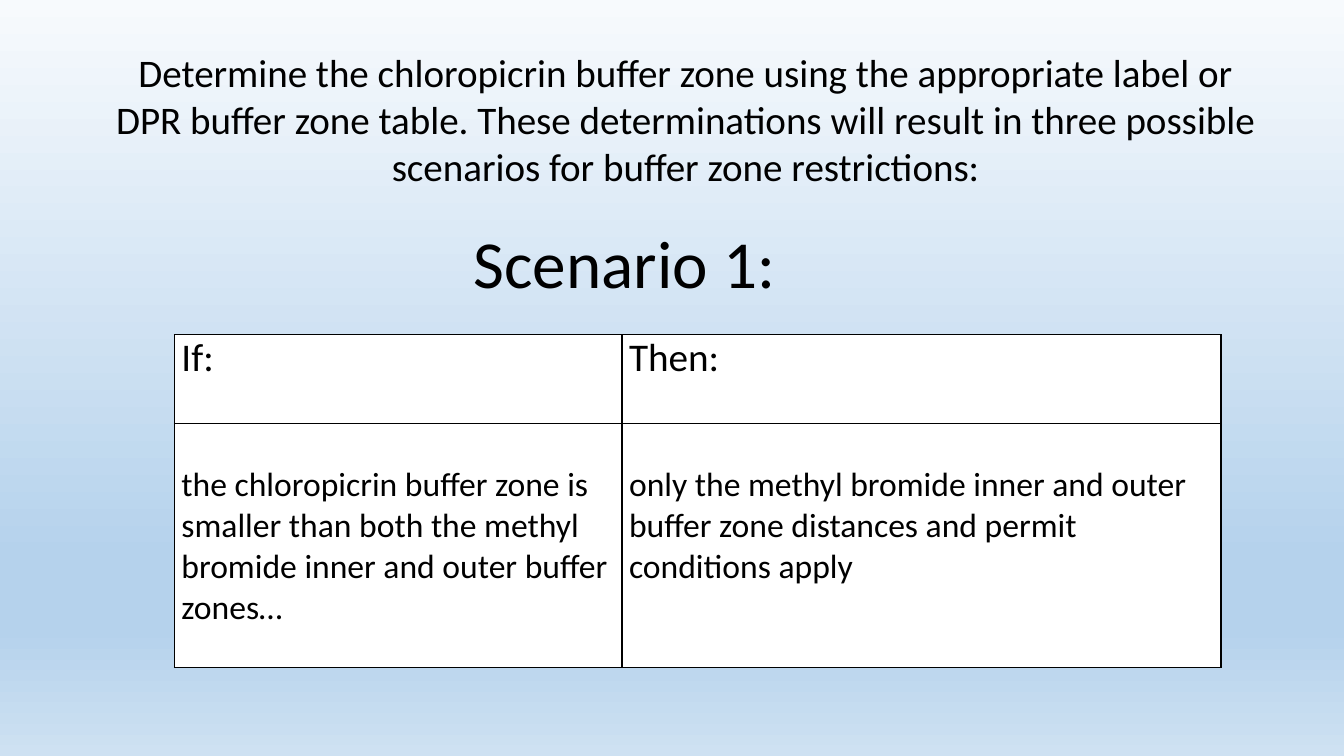
from pptx import Presentation
from pptx.dml.color import RGBColor
from pptx.enum.text import MSO_ANCHOR, PP_ALIGN
from pptx.oxml import parse_xml
from pptx.oxml.ns import nsdecls
from pptx.util import Inches, Pt

LEFT, CENTER = PP_ALIGN.LEFT, PP_ALIGN.CENTER
TOP, MIDDLE = MSO_ANCHOR.TOP, MSO_ANCHOR.MIDDLE

# Content
INTRO = ("Determine the chloropicrin buffer zone using the appropriate label or "
         "DPR buffer zone table. These determinations will result in three "
         "possible scenarios for buffer zone restrictions:")
HEADING = "Scenario 1:"
ROWS = [
    ("If:", "Then:"),
    ("the chloropicrin buffer zone is smaller than both the methyl bromide "
     "inner and outer buffer zones…",
     "only the methyl bromide inner and outer buffer zone distances and "
     "permit conditions apply"),
]

THEME = {
    "font": "Calibri", "ink": "000000", "cell": "FFFFFF",
    "intro": 27.9, "heading": 48, "rows": (28, 24), "rule": 1,
    "sky": [(0, "F7FAFD"), (74, "B5D2EC"), (83, "B5D2EC"), (100, "CEE1F2")],
}

# Layout in inches
COLS = (4.44, 5.94)
HEIGHTS = (0.88, 2.42)
PADS = (0, 0.41)


def style(frame, size, align=LEFT):
    for para in frame.paragraphs:
        para.alignment = align
        for run in para.runs:
            run.font.name = THEME["font"]
            run.font.size = Pt(size)
            run.font.color.rgb = RGBColor.from_string(THEME["ink"])


def add_text(slide, text, box, size, align, anchor):
    frame = slide.shapes.add_textbox(*map(Inches, box)).text_frame
    frame.word_wrap = True
    frame.vertical_anchor = anchor
    frame.text = text
    style(frame, size, align)


def set_sky(slide):
    fill = slide.background.fill
    fill.gradient()
    fill.gradient_angle = 270
    stops = "".join(
        f'<a:gs pos="{pos * 1000}"><a:srgbClr val="{tint}"/></a:gs>'
        for pos, tint in THEME["sky"])
    grad = slide.background.fill._fill._gradFill
    grad.replace(grad.gsLst, parse_xml(
        f'<a:gsLst {nsdecls("a")}>{stops}</a:gsLst>'))


def add_rules(cell):
    props = cell._tc.get_or_add_tcPr()
    for side in ("lnL", "lnR", "lnT", "lnB"):
        props.append(parse_xml(
            f'<a:{side} {nsdecls("a")} w="{Pt(THEME["rule"])}"><a:solidFill>'
            f'<a:srgbClr val="{THEME["ink"]}"/></a:solidFill></a:{side}>'))


def add_grid(slide):
    box = (1.73, 3.32, sum(COLS), sum(HEIGHTS))
    grid = slide.shapes.add_table(
        len(ROWS), len(COLS), *map(Inches, box)).table
    grid.first_row = grid.horz_banding = False
    for col, width in zip(grid.columns, COLS):
        col.width = Inches(width)
    for r, texts in enumerate(ROWS):
        grid.rows[r].height = Inches(HEIGHTS[r])
        for c, text in enumerate(texts):
            cell = grid.cell(r, c)
            cell.text = text
            cell.margin_left = cell.margin_right = Inches(0.07)
            cell.margin_top, cell.margin_bottom = Inches(PADS[r]), 0
            style(cell.text_frame, THEME["rows"][r])
            add_rules(cell)
            cell.fill.solid()
            cell.fill.fore_color.rgb = RGBColor.from_string(THEME["cell"])


def main():
    deck = Presentation()
    deck.slide_width, deck.slide_height = Inches(13.33), Inches(7.5)
    slide = deck.slides.add_slide(deck.slide_layouts[6])
    set_sky(slide)
    # Introduction, table, then heading
    add_text(slide, INTRO, (1.05, 0.43, 11.5, 1.5), THEME["intro"], CENTER, MIDDLE)
    add_grid(slide)
    add_text(slide, HEADING, (4.6, 2.15, 3.57, 0.91), THEME["heading"], LEFT, TOP)
    deck.save("out.pptx")


if __name__ == "__main__":
    main()
